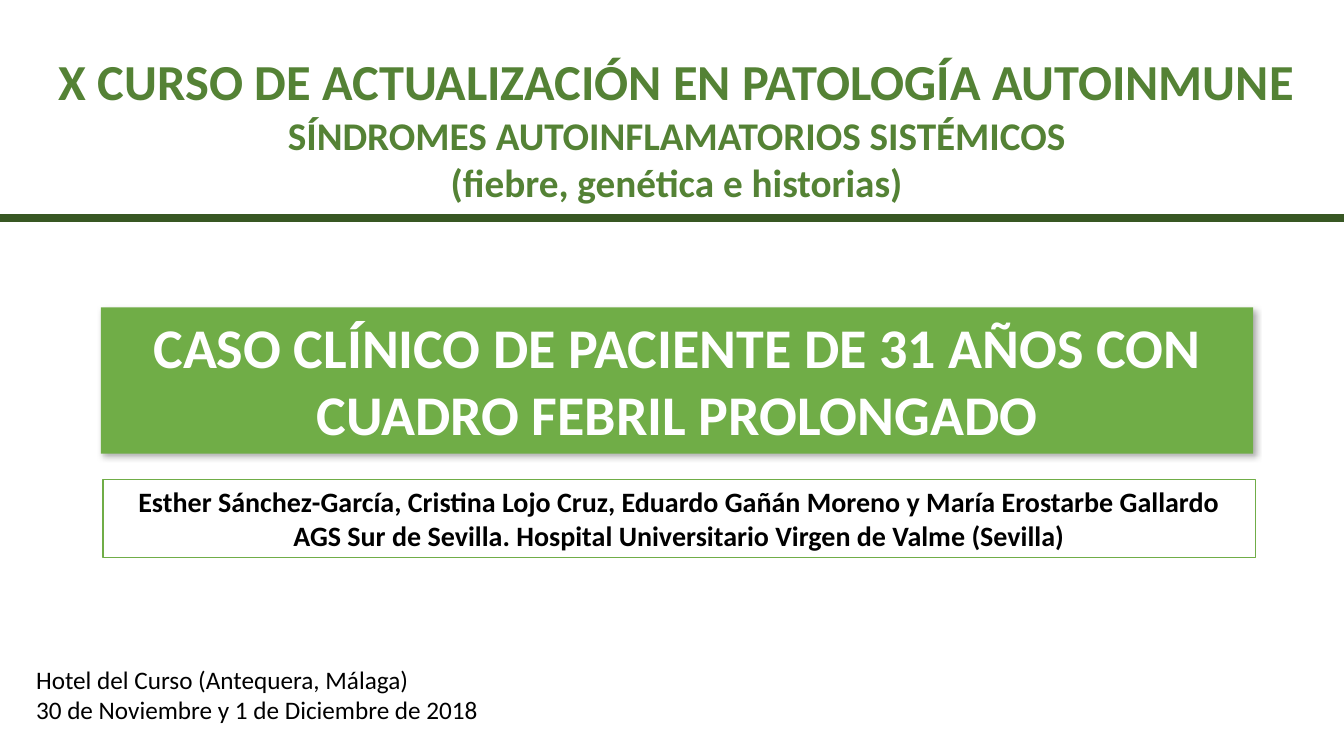
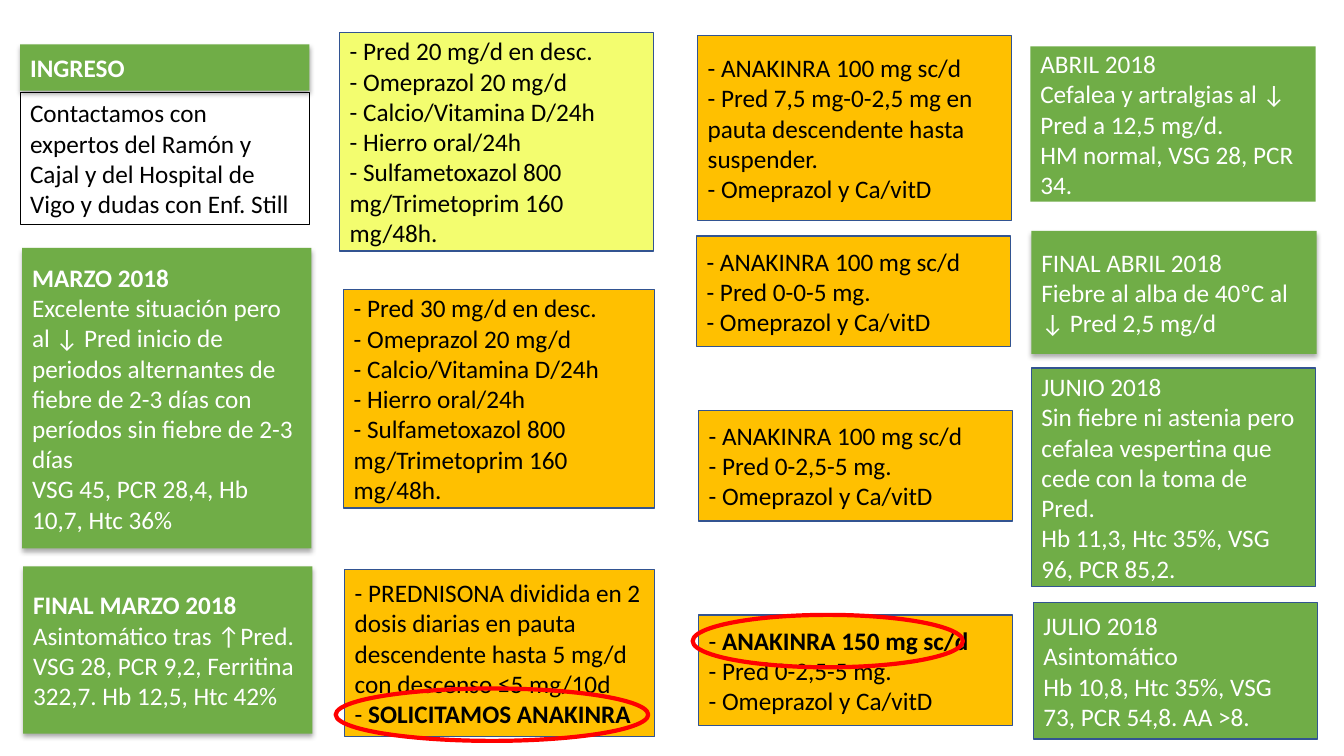
from dataclasses import dataclass
from typing import NamedTuple, Optional, Sequence

from lxml import etree
from pptx import Presentation
from pptx.dml.color import RGBColor
from pptx.enum.shapes import MSO_CONNECTOR, MSO_SHAPE
from pptx.enum.text import MSO_ANCHOR, MSO_AUTO_SIZE, PP_ALIGN
from pptx.oxml.ns import qn
from pptx.util import Inches, Pt

RECTANGLE, OVAL = MSO_SHAPE.RECTANGLE, MSO_SHAPE.OVAL
STRAIGHT = MSO_CONNECTOR.STRAIGHT
TOP, MIDDLE = MSO_ANCHOR.TOP, MSO_ANCHOR.MIDDLE
LEFT, CENTER = PP_ALIGN.LEFT, PP_ALIGN.CENTER
NO_AUTOFIT = MSO_AUTO_SIZE.NONE

FONT = "Calibri"
GREEN, MID_GREEN, DARK_GREEN = "70AD47", "548235", "385723"
AMBER, YELLOW = "FFC000", "F3FD6F"
BLUE, RED = "325491", "FF0000"
BLACK, WHITE = "000000", "FFFFFF"
SLIDE_WIDTH, SLIDE_HEIGHT = 13.33, 7.5
TITLE_LAYOUT, BLANK_LAYOUT = 0, 6


class Box(NamedTuple):
    left: float
    top: float
    width: float
    height: float


class Line(NamedTuple):
    """One paragraph: plain text followed by bold text."""
    plain: str = ""
    bold: str = ""
    size: float = 18


class Shadow(NamedTuple):
    opacity: int
    blur: float
    distance: float
    angle: int


@dataclass(frozen=True)
class Style:
    fill: Optional[str] = None
    line: Optional[str] = None
    line_width: float = 1
    text: str = BLACK
    shadow: Optional[Shadow] = None


@dataclass(frozen=True)
class Card:
    box: Box
    style: Style
    lines: Sequence[Line]
    anchor: int = MIDDLE


CARD_SHADOW = Shadow(32, 3.5, 2.2, 90)
BANNER = Style(fill=GREEN, text=WHITE, shadow=Shadow(30, 4.5, 2.6, 53))
AUTHORS = Style(fill=WHITE, line=GREEN)
EVENT = Style(fill=GREEN, text=WHITE)
RAISED_EVENT = Style(fill=GREEN, text=WHITE, shadow=CARD_SHADOW)
OUTLINED_EVENT = Style(fill=GREEN, line=BLUE, text=WHITE)
FIRST_TREATMENT = Style(fill=YELLOW, line=BLUE)
TREATMENT = Style(fill=AMBER, line=BLUE)
NOTE = Style(line=BLACK, line_width=0.75)
HIGHLIGHT = Style(line=RED, line_width=3)


def supportive_drugs(prednisone: str) -> list[Line]:
    return [
        Line(f"- Pred {prednisone} en desc."),
        Line("- Omeprazol 20 mg/d"),
        Line("- Calcio/Vitamina D/24h"),
        Line("- Hierro oral/24h"),
        Line("- Sulfametoxazol 800 mg/Trimetoprim 160 mg/48h."),
    ]


def anakinra_drugs(prednisone: str,
                   anakinra: Line = Line("- ANAKINRA 100 mg sc/d")) -> list[Line]:
    return [anakinra, Line(f"- Pred {prednisone}"), Line("- Omeprazol y Ca/vitD")]


ADMISSION_COLUMN = [
    Card(Box(0.2, 0.44, 2.87, 0.46), RAISED_EVENT, [Line(bold="INGRESO")]),
    Card(Box(0.2, 0.92, 2.87, 1.31), NOTE, [
        Line("Contactamos con expertos del Ramón y Cajal y del Hospital de Vigo "
             "y dudas con Enf. Still"),
    ], TOP),
    Card(Box(0.22, 2.46, 2.87, 2.98), RAISED_EVENT, [
        Line(bold="MARZO 2018"),
        Line("Excelente situación pero al ↓ Pred inicio de periodos alternantes de "
             "fiebre de 2-3 días con períodos sin fiebre de 2-3 días"),
        Line("VSG 45, PCR 28,4, Hb 10,7, Htc 36%"),
    ]),
    Card(Box(0.23, 5.62, 2.87, 1.66), RAISED_EVENT, [
        Line(bold="FINAL MARZO 2018"),
        Line("Asintomático tras ↑Pred."),
        Line("VSG 28, PCR 9,2, Ferritina 322,7. Hb 12,5, Htc 42%"),
    ]),
]
STEROID_COLUMN = [
    Card(Box(3.37, 0.32, 3.11, 2.17), FIRST_TREATMENT, supportive_drugs("20 mg/d")),
    Card(Box(3.41, 2.87, 3.08, 2.17), TREATMENT, supportive_drugs("30 mg/d")),
    Card(Box(3.42, 5.65, 3.07, 1.66), TREATMENT, [
        Line("- PREDNISONA dividida en 2 dosis diarias en pauta descendente hasta "
             "5 mg/d con descenso ≤5 mg/10d"),
        Line("- ", "SOLICITAMOS ANAKINRA"),
    ]),
]
ANAKINRA_COLUMN = [
    Card(Box(6.92, 0.35, 3.11, 1.84), TREATMENT,
         anakinra_drugs("7,5 mg-0-2,5 mg en pauta descendente hasta suspender.")),
    Card(Box(6.91, 2.34, 3.11, 1.1), TREATMENT, anakinra_drugs("0-0-5 mg.")),
    Card(Box(6.93, 4.07, 3.11, 1.1), TREATMENT, anakinra_drugs("0-2,5-5 mg.")),
    Card(Box(6.93, 6.1, 3.11, 1.1), TREATMENT,
         anakinra_drugs("0-2,5-5 mg.", Line("- ", "ANAKINRA 150 mg sc/d"))),
]
FOLLOW_UP_COLUMN = [
    Card(Box(10.22, 0.46, 2.83, 1.54), EVENT, [
        Line("ABRIL 2018"),
        Line("Cefalea y artralgias al ↓ Pred a 12,5 mg/d."),
        Line("HM normal, VSG 28, PCR 34."),
    ]),
    Card(Box(10.23, 2.29, 2.83, 1.22), RAISED_EVENT, [
        Line("FINAL ABRIL 2018"),
        Line("Fiebre al alba de 40ºC al ↓ Pred 2,5 mg/d"),
    ]),
    Card(Box(10.23, 3.65, 2.82, 2.17), OUTLINED_EVENT, [
        Line("JUNIO 2018"),
        Line("Sin fiebre ni astenia pero cefalea vespertina que cede con la toma de Pred."),
        Line("Hb 11,3, Htc 35%, VSG 96, PCR 85,2."),
    ]),
    Card(Box(10.25, 5.98, 2.82, 1.35), OUTLINED_EVENT, [
        Line("JULIO 2018"),
        Line("Asintomático"),
        Line("Hb 10,8, Htc 35%, VSG 73, PCR 54,8. AA >8."),
    ]),
]
HIGHLIGHTS = [Box(6.87, 6.1, 2.68, 0.52), Box(3.33, 6.83, 3.1, 0.52)]


def color(value: str) -> RGBColor:
    return RGBColor.from_string(value)


def inches(box: Box) -> list[int]:
    return [Inches(length) for length in box]


def write_text(shape, lines: Sequence[Line], *, text_color: str = BLACK,
               align=LEFT, anchor=TOP) -> None:
    frame = shape.text_frame
    frame.word_wrap = True
    frame.auto_size = NO_AUTOFIT
    frame.vertical_anchor = anchor
    for index, line in enumerate(lines):
        paragraph = frame.add_paragraph() if index else frame.paragraphs[0]
        paragraph.alignment = align
        paragraph.space_before = Pt(0)
        for text, bold in ((line.plain, False), (line.bold, True)):
            if text:
                run = paragraph.add_run()
                run.text = text
                run.font.name = FONT
                run.font.size = Pt(line.size)
                run.font.bold = bold
                run.font.color.rgb = color(text_color)


def add_shadow(shape, shadow: Shadow) -> None:
    effects = shape._element.spPr.find(qn("a:effectLst"))
    outer = etree.SubElement(
        effects, qn("a:outerShdw"), blurRad=str(Pt(shadow.blur)),
        dist=str(Pt(shadow.distance)), dir=str(shadow.angle * 60000),
        algn="ctr", rotWithShape="0")
    shade = etree.SubElement(outer, qn("a:srgbClr"), val=BLACK)
    etree.SubElement(shade, qn("a:alpha"), val=str(shadow.opacity * 1000))


def apply_style(shape, style: Style) -> None:
    if style.fill:
        shape.fill.solid()
        shape.fill.fore_color.rgb = color(style.fill)
    else:
        shape.fill.background()
    if style.line:
        shape.line.color.rgb = color(style.line)
        shape.line.width = Pt(style.line_width)
    else:
        shape.line.fill.background()
    shape.shadow.inherit = False
    if style.shadow:
        add_shadow(shape, style.shadow)


def add_styled_shape(slide, kind, box: Box, style: Style):
    shape = slide.shapes.add_shape(kind, *inches(box))
    apply_style(shape, style)
    return shape


def add_card(slide, card: Card) -> None:
    shape = add_styled_shape(slide, RECTANGLE, card.box, card.style)
    write_text(shape, card.lines, text_color=card.style.text, anchor=card.anchor)


def fill_placeholder(shape, box: Box, style: Style, lines: Sequence[Line]) -> None:
    shape.left, shape.top, shape.width, shape.height = inches(box)
    apply_style(shape, style)
    write_text(shape, lines, text_color=style.text, align=CENTER)


def add_rule(slide, top: float) -> None:
    rule = slide.shapes.add_connector(
        STRAIGHT, 0, Inches(top), Inches(SLIDE_WIDTH), Inches(top))
    rule.line.color.rgb = color(DARK_GREEN)
    rule.line.width = Pt(6)
    etree.SubElement(rule._element.spPr, qn("a:effectLst"))


def build_cover(presentation) -> None:
    slide = presentation.slides.add_slide(presentation.slide_layouts[TITLE_LAYOUT])
    course = slide.shapes.add_textbox(*inches(Box(0.37, 0.45, 12.68, 1.95)))
    write_text(course, [
        Line(bold="X CURSO DE ACTUALIZACIÓN EN PATOLOGÍA AUTOINMUNE", size=36),
        Line(bold="SÍNDROMES AUTOINFLAMATORIOS SISTÉMICOS", size=28),
        Line(bold="(fiebre, genética e historias)", size=28),
    ], text_color=MID_GREEN, align=CENTER)
    venue = slide.shapes.add_textbox(*inches(Box(0.26, 6.54, 8.93, 0.71)))
    write_text(venue, [
        Line("Hotel del Curso (Antequera, Málaga)"),
        Line("30 de Noviembre y 1 de Diciembre de 2018"),
    ])
    fill_placeholder(slide.shapes.title, Box(1, 3.05, 11.43, 1.45), BANNER, [
        Line(bold="CASO CLÍNICO DE PACIENTE DE 31 AÑOS CON CUADRO FEBRIL PROLONGADO",
             size=40),
    ])
    fill_placeholder(slide.placeholders[1], Box(1.02, 4.76, 11.43, 0.77), AUTHORS, [
        Line(bold="Esther Sánchez-García, Cristina Lojo Cruz, Eduardo Gañán Moreno "
                  "y María Erostarbe Gallardo", size=20),
        Line(bold="AGS Sur de Sevilla. Hospital Universitario Virgen de Valme (Sevilla)",
             size=20),
    ])
    add_rule(slide, 2.16)


def build_timeline(presentation) -> None:
    slide = presentation.slides.add_slide(presentation.slide_layouts[BLANK_LAYOUT])
    for column in (ADMISSION_COLUMN, STEROID_COLUMN, ANAKINRA_COLUMN, FOLLOW_UP_COLUMN):
        for card in column:
            add_card(slide, card)
    for box in HIGHLIGHTS:
        add_styled_shape(slide, OVAL, box, HIGHLIGHT)


def main() -> None:
    presentation = Presentation()
    presentation.slide_width = Inches(SLIDE_WIDTH)
    presentation.slide_height = Inches(SLIDE_HEIGHT)
    build_cover(presentation)
    build_timeline(presentation)
    presentation.save("out.pptx")


if __name__ == "__main__":
    main()
